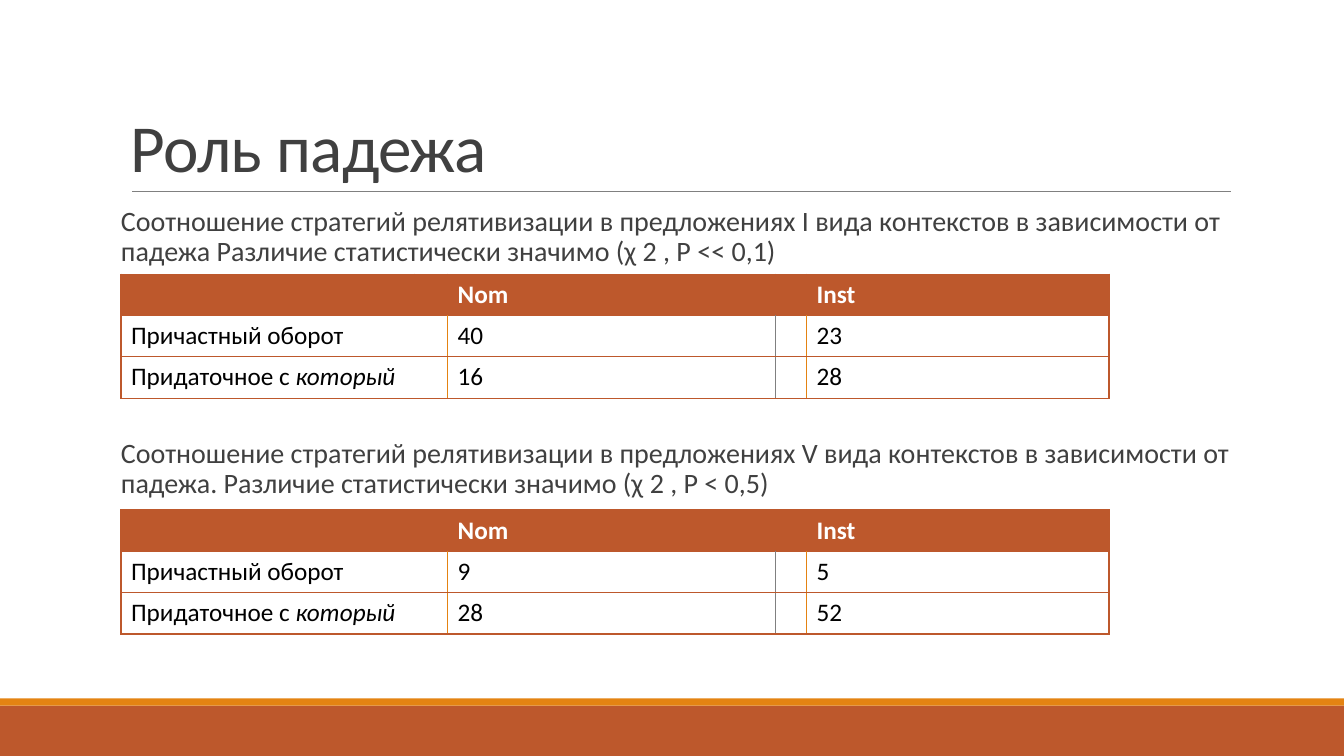
import pptx
import pptx.util
import pptx.dml.color
import pptx.enum.shapes
import pptx.enum.text
import pptx.oxml.ns
import lxml.etree

THEME = {
    "font": "Calibri", "title": 48, "body": 20, "cell": 18,
    "ink": "404040", "black": "000000", "white": "FFFFFF",
    "rust": "BD582C", "orange": "E48312", "grey": "808080",
}
WIDTH, HEIGHT = 13.33, 7.5
LEFT, TEXT_WIDTH = 1.2, 11
COLUMNS = [2.91, 0.33, 3.25, 0.31, 3]
ROW = 0.41
inch = pptx.util.Inches


def add_span(para, text, size, color, bold=False, italic=False):
    span = para.add_run()
    span.text = text
    span.font.name = THEME["font"]
    span.font.size = pptx.util.Pt(size)
    span.font.bold, span.font.italic = bold, italic
    span.font.color.rgb = pptx.dml.color.RGBColor.from_string(color)
    return span


def set_borders(cell, colors):
    """Colours run left, right, top, bottom; None leaves the side open."""
    props = cell._tc.get_or_add_tcPr()
    for index, (side, color) in enumerate(zip("LRTB", colors)):
        line = lxml.etree.Element(pptx.oxml.ns.qn(f"a:ln{side}"), w="12700")
        if color:
            fill = lxml.etree.SubElement(line, pptx.oxml.ns.qn("a:solidFill"))
            lxml.etree.SubElement(fill, pptx.oxml.ns.qn("a:srgbClr"), val=color)
        else:
            lxml.etree.SubElement(line, pptx.oxml.ns.qn("a:noFill"))
        props.insert(index, line)


deck = pptx.Presentation()
deck.slide_width, deck.slide_height = inch(WIDTH), inch(HEIGHT)
page = deck.slides.add_slide(deck.slide_layouts[6])

# Footer bands
for top, height, color in [(7, 0.5, "rust"), (6.93, 0.07, "orange")]:
    band = page.shapes.add_shape(
        pptx.enum.shapes.MSO_SHAPE.RECTANGLE, 0, inch(top), inch(WIDTH), inch(height))
    band.shadow.inherit = False
    band.fill.solid()
    band.fill.fore_color.rgb = pptx.dml.color.RGBColor.from_string(THEME[color])
    band.line.fill.background()

# Rule under the title
rule = page.shapes.add_connector(
    pptx.enum.shapes.MSO_CONNECTOR.STRAIGHT, inch(1.31), inch(1.9), inch(12.21), inch(1.9))
rule.line.color.rgb = pptx.dml.color.RGBColor.from_string(THEME["grey"])
rule.line.width = pptx.util.Pt(0.5)
lxml.etree.SubElement(rule._element.spPr, pptx.oxml.ns.qn("a:effectLst"))

# Title
title = page.shapes.add_textbox(inch(LEFT), inch(0.31), inch(TEXT_WIDTH), inch(1.59)).text_frame
title.word_wrap = True
title.vertical_anchor = pptx.enum.text.MSO_ANCHOR.BOTTOM
title.paragraphs[0].line_spacing = 0.85
heading = add_span(title.paragraphs[0], "Роль падежа", THEME["title"], THEME["ink"])
heading.font._element.set("spc", "-50")

# Captions: the second one starts below the first table
captions = [
    ("Соотношение стратегий релятивизации в предложениях I вида контекстов "
     "в зависимости от падежа Различие статистически значимо (χ 2 , P << 0,1)", 0),
    ("Соотношение стратегий релятивизации в предложениях V вида контекстов "
     "в зависимости от падежа. Различие статистически значимо (χ 2 , P < 0,5)", 120),
]
body = page.shapes.add_textbox(inch(LEFT), inch(2.01), inch(TEXT_WIDTH), inch(4.4)).text_frame
body.word_wrap = True
body.margin_left = body.margin_right = 0
for index, (caption, gap) in enumerate(captions):
    para = body.add_paragraph() if index else body.paragraphs[0]
    para.line_spacing = 0.9
    para.space_before, para.space_after = pptx.util.Pt(gap), pptx.util.Pt(2)
    add_span(para, caption, THEME["body"], THEME["ink"])

# Tables: vertical edges of the data rows, from left to right
rust = THEME["rust"]
edges = [rust, None, THEME["orange"], THEME["grey"], THEME["orange"], rust]
tables = [
    (2.72, ["40", "23"], ["16", "28"]),
    (5.06, ["9", "5"], ["28", "52"]),
]
for top, participle, clause in tables:
    rows = [
        [[], ["Nom"], ["Inst"]],
        [["Причастный оборот"]] + [[value] for value in participle],
        [["Придаточное с ", "который"]] + [[value] for value in clause],
    ]
    grid = page.shapes.add_table(
        len(rows), len(COLUMNS), inch(LEFT), inch(top),
        inch(sum(COLUMNS)), inch(ROW * len(rows))).table
    grid.horz_banding = False
    for column, width in zip(grid.columns, COLUMNS):
        column.width = inch(width)
    for r, texts in enumerate(rows):
        grid.rows[r].height = inch(ROW)
        header = r == 0
        for c in range(len(COLUMNS)):
            cell = grid.cell(r, c)
            cell.fill.solid()
            cell.fill.fore_color.rgb = pptx.dml.color.RGBColor.from_string(
                rust if header else THEME["white"])
            sides = [rust, rust] if header else edges[c:c + 2]
            set_borders(cell, sides + [rust, rust])
            para = cell.text_frame.paragraphs[0]
            para.font.size = pptx.util.Pt(THEME["cell"])
            # Text stands in every second column; the others are spacers
            for part, text in enumerate(texts[c // 2] if c % 2 == 0 else []):
                add_span(para, text, THEME["cell"],
                         THEME["white"] if header else THEME["black"],
                         bold=header, italic=part == 1)

deck.save("out.pptx")
